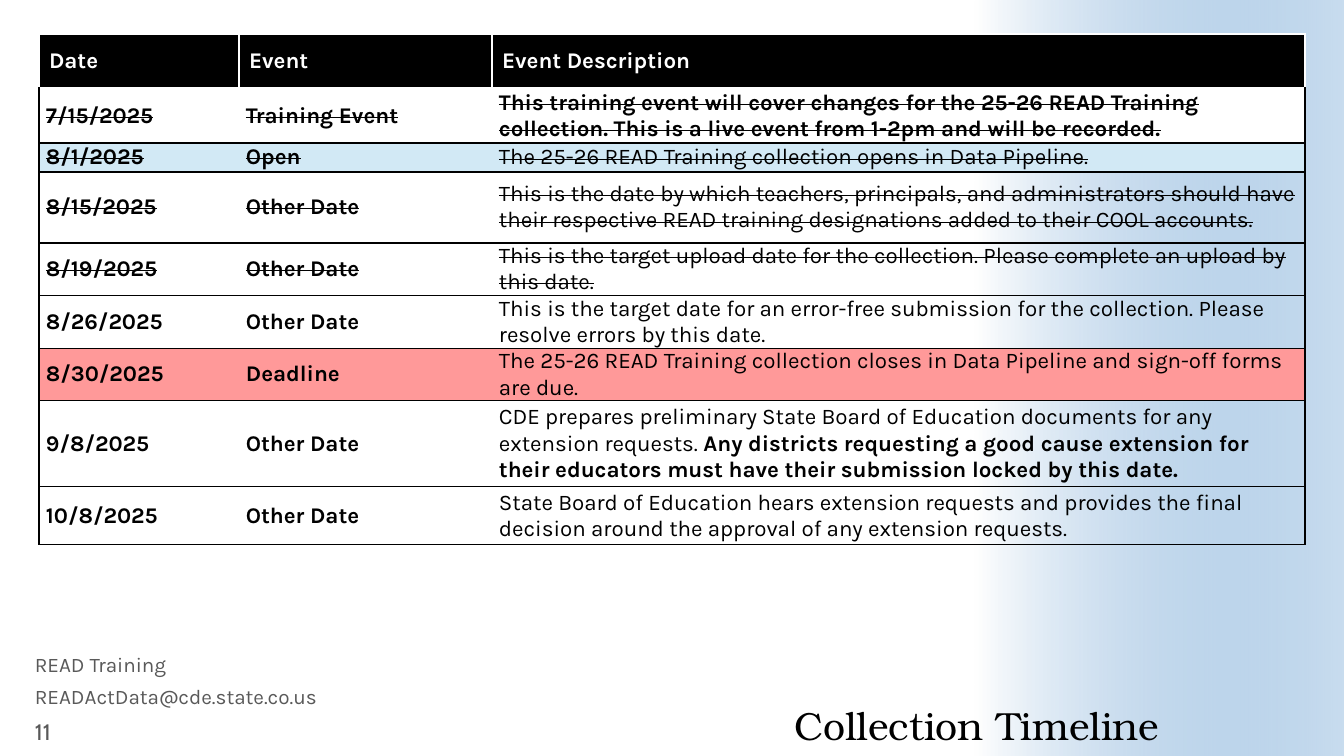
import dataclasses
import typing

import pptx
import pptx.dml.color
import pptx.enum.shapes
import pptx.enum.text
import pptx.oxml
import pptx.oxml.ns
import pptx.util

SCALE = 12192000 / 1344
HUES = {"black": "000000", "white": "FFFFFF", "gray": "595959",
        "sky": "D2E9F5", "rose": "FF9999", "blue": "488BC9"}
PLAIN_STYLE = "{2D5ABB26-0587-4C30-8999-92F81FD0307C}"
MIDDLE = pptx.enum.text.MSO_ANCHOR.MIDDLE


@dataclasses.dataclass
class Phrase:
    text: str
    bold: bool = False


@dataclasses.dataclass
class Event:
    high: int
    date: str
    kind: str
    about: list[Phrase]
    fill: str = ""
    struck: bool = False


@dataclasses.dataclass
class Note:
    text: str
    top: int
    wide: int
    size: float
    font: str
    anchor: typing.Any
    space: float


COLS = [200, 253, 813]
HEADS = ["Date", "Event", "Event Description"]
HEAD_HIGH = 55
EVENTS = [
    Event(54, "7/15/2025", "Training Event", [Phrase(
        "This training event will cover changes for the 25-26 READ Training collection. "
        "This is a live event from 1-2pm and will be recorded.", True)], "white", True),
    Event(29, "8/1/2025", "Open", [Phrase(
        "The 25-26 READ Training collection opens in Data Pipeline.")], "sky", True),
    Event(71, "8/15/2025", "Other Date", [Phrase(
        "This is the date by which teachers, principals, and administrators should have "
        "their respective READ training designations added to their COOL accounts.")],
        struck=True),
    Event(52, "8/19/2025", "Other Date", [Phrase(
        "This is the target upload date for the collection. "
        "Please complete an upload by this date.")], struck=True),
    Event(53, "8/26/2025", "Other Date", [Phrase(
        "This is the target date for an error-free submission for the collection. "
        "Please resolve errors by this date.")]),
    Event(52, "8/30/2025", "Deadline", [Phrase(
        "The 25-26 READ Training collection closes in Data Pipeline "
        "and sign-off forms are due.")], "rose"),
    Event(86, "9/8/2025", "Other Date", [
        Phrase("CDE prepares preliminary State Board of Education documents "
               "for any extension requests. "),
        Phrase("Any districts requesting a good cause extension for their educators "
               "must have their submission locked by this date.", True)]),
    Event(58, "10/8/2025", "Other Date", [Phrase(
        "State Board of Education hears extension requests and provides the final "
        "decision around the approval of any extension requests.")]),
]
NOTES = [
    Note("READ Training", 652, 392, 14.8, "Karla", pptx.enum.text.MSO_ANCHOR.TOP, 0.8),
    Note("READActData@cde.state.co.us", 684, 392, 14.8, "Karla",
         pptx.enum.text.MSO_ANCHOR.TOP, 0.8),
    Note("11", 716, 86, 16, "Cabin", MIDDLE, 1.0),
]


def px(count: int) -> pptx.util.Emu:
    return pptx.util.Emu(round(count * SCALE))


def hue(name: str) -> pptx.dml.color.RGBColor:
    return pptx.dml.color.RGBColor.from_string(HUES[name])


def add_run(para: typing.Any, text: str, font: str, size: float, tint: str,
            bold: bool = False, struck: bool = False) -> None:
    run = para.add_run()
    run.text = text
    run.font.name = font
    run.font.size = pptx.util.Pt(size)
    run.font.bold = bold
    run.font.color.rgb = hue(tint)
    if struck:
        run._r.get_or_add_rPr().set("strike", "sngStrike")


def add_edge(cell: typing.Any, side: str, tint: str, width: float) -> None:
    paint = (f'<a:solidFill><a:srgbClr val="{HUES[tint]}"/></a:solidFill>'
             if tint else "<a:noFill/>")
    cell._tc.get_or_add_tcPr().append(pptx.oxml.parse_xml(
        f'<a:ln{side} {pptx.oxml.ns.nsdecls("a")} w="{pptx.util.Pt(width)}">'
        f'{paint}</a:ln{side}>'))


def fill_cell(cell: typing.Any, about: list[Phrase], tint: str, fill: str,
              edges: dict[str, tuple[str, float]], struck: bool = False) -> None:
    for side in "LRTB":
        add_edge(cell, side, *edges.get(side, ("", 1)))
    if fill:
        cell.fill.solid()
        cell.fill.fore_color.rgb = hue(fill)
    else:
        cell.fill.background()
    cell.vertical_anchor = MIDDLE
    for phrase in about:
        add_run(cell.text_frame.paragraphs[0], phrase.text, "Karla", 16, tint,
                phrase.bold, struck)


def add_band(slide: typing.Any) -> None:
    band = slide.shapes.add_shape(pptx.enum.shapes.MSO_SHAPE.RECTANGLE,
                                  px(781), px(194), px(756), px(369))
    band.rotation = 270
    band.shadow.inherit = False
    band.line.fill.background()
    band.fill.gradient()
    band.fill.gradient_angle = 270
    first, last = band.fill.gradient_stops
    first.position, last.position = 0, 1
    first.color.rgb, last.color.rgb = hue("white"), hue("blue")
    shade = band._element.spPr.findall(".//" + pptx.oxml.ns.qn("a:srgbClr"))[-1]
    shade.append(pptx.oxml.parse_xml(
        f'<a:alpha {pptx.oxml.ns.nsdecls("a")} val="30000"/>'))
    slide.shapes._spTree.insert(2, band._element)


def set_title(slide: typing.Any) -> None:
    title = slide.shapes.title
    title.left, title.top, title.width, title.height = px(429), px(650), px(730), px(99)
    frame = title.text_frame
    frame.margin_left = frame.margin_right = frame.margin_top = frame.margin_bottom = 0
    frame.vertical_anchor = pptx.enum.text.MSO_ANCHOR.BOTTOM
    frame.auto_size = pptx.enum.text.MSO_AUTO_SIZE.NONE
    para = frame.paragraphs[0]
    para.alignment = pptx.enum.text.PP_ALIGN.RIGHT
    para.line_spacing = 0.9
    add_run(para, "Collection Timeline", "TeX Gyre Bonum", 28, "black")


def add_grid(slide: typing.Any) -> None:
    highs = [HEAD_HIGH] + [event.high for event in EVENTS]
    grid = slide.shapes.add_table(len(highs), len(COLS), px(39), px(34),
                                  px(sum(COLS)), px(sum(highs))).table
    grid._tbl.tblPr.find(pptx.oxml.ns.qn("a:tableStyleId")).text = PLAIN_STYLE
    grid.horz_banding = False
    for col, wide in zip(grid.columns, COLS):
        col.width = px(wide)
    for row, high in zip(grid.rows, highs):
        row.height = px(high)
    edges = {side: ("white", 1) for side in "LRT"} | {"B": ("white", 3)}
    for spot, head in enumerate(HEADS):
        fill_cell(grid.cell(0, spot), [Phrase(head, True)], "white", "black", edges)
    for line, event in enumerate(EVENTS, 1):
        texts = [[Phrase(event.date, True)], [Phrase(event.kind, True)], event.about]
        for spot, about in enumerate(texts):
            edges = {"T": ("white" if line == 1 else "black", 1), "B": ("black", 1)}
            if spot != 1:
                edges["L" if spot == 0 else "R"] = ("black", 1)
            cell = grid.cell(line, spot)
            fill_cell(cell, about, "black", event.fill, edges, event.struck)
            cell.margin_left = cell.margin_right = px(7)
            cell.margin_top = cell.margin_bottom = 0


def add_note(slide: typing.Any, note: Note) -> None:
    frame = slide.shapes.add_textbox(px(25), px(note.top), px(note.wide),
                                     px(31)).text_frame
    frame.word_wrap = True
    frame.vertical_anchor = note.anchor
    para = frame.paragraphs[0]
    para.line_spacing = note.space
    add_run(para, note.text, note.font, note.size, "gray")


def main() -> None:
    deck = pptx.Presentation()
    deck.slide_width, deck.slide_height = px(1344), px(756)
    slide = deck.slides.add_slide(deck.slide_layouts[5])
    add_band(slide)
    set_title(slide)
    add_grid(slide)
    for note in NOTES:
        add_note(slide, note)
    deck.save("out.pptx")


if __name__ == "__main__":
    main()
